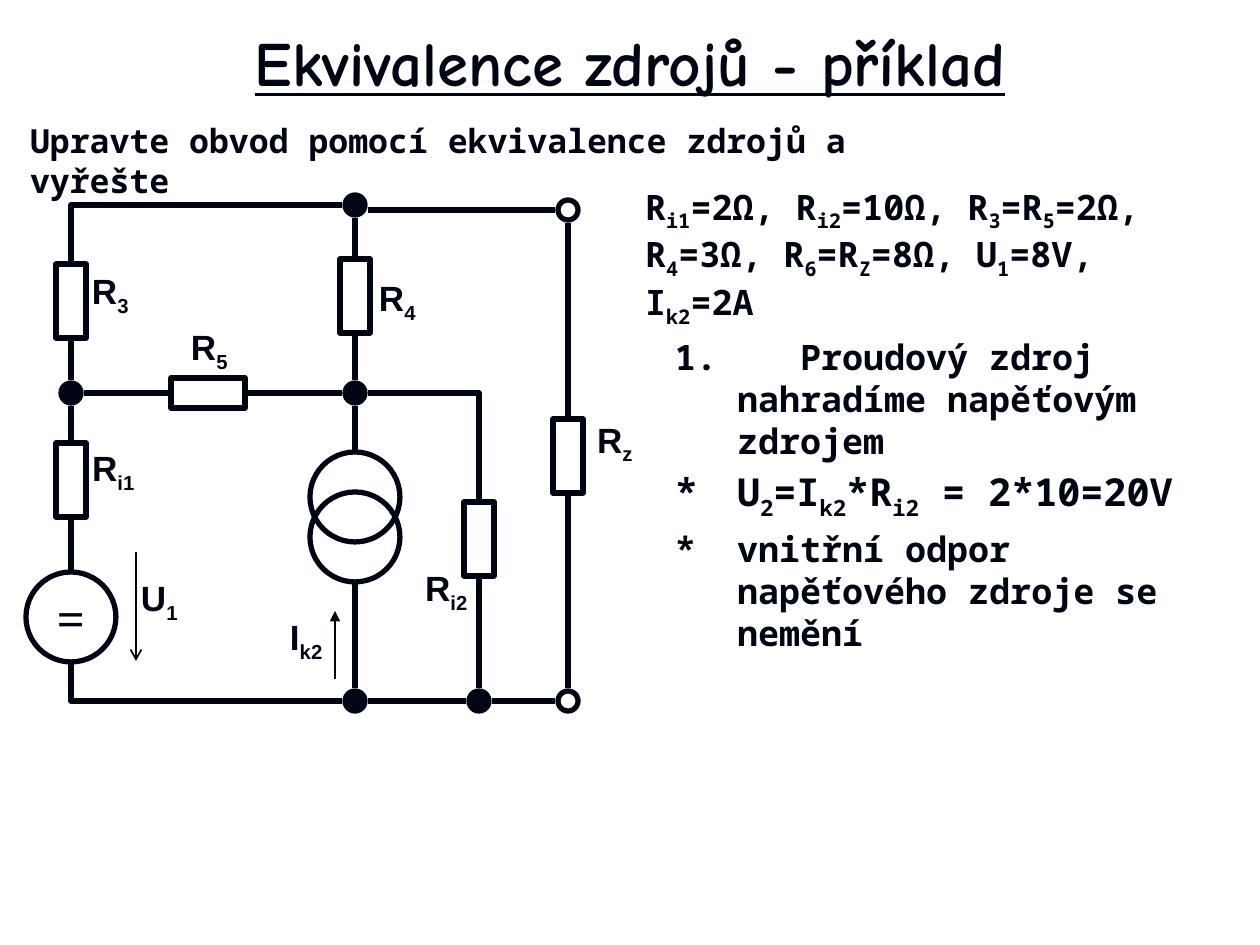
from lxml.etree import SubElement
from pptx import Presentation
from pptx.dml.color import RGBColor
from pptx.enum.shapes import MSO_CONNECTOR, MSO_SHAPE
from pptx.enum.text import MSO_ANCHOR, MSO_AUTO_SIZE, PP_ALIGN
from pptx.oxml.ns import qn
from pptx.util import Emu, Pt

COLORS = {"ink": "000514"}
MONO = "Noto Sans Mono"
RADIUS = 10
GAP = 13


def px(n):
    return Emu(round(n * 914400 / 126))


def ink():
    return RGBColor.from_string(COLORS["ink"])


def place(sp, x, y, w, h):
    sp.left, sp.top, sp.width, sp.height = px(x), px(y), px(w), px(h)


def set_font(font, name, size):
    font.name, font.size, font.bold = name, Pt(size), True
    font.color.rgb = ink()


def write(p, text, name, size):
    set_font(p.font, name, size)
    for i, part in enumerate(text.split("|")):
        r = p.add_run()
        r.text = part
        if i % 2:
            r.font._element.set("baseline", "-25000")


def set_frame(tf, wrap=True):
    tf.word_wrap = wrap
    tf.auto_size = MSO_AUTO_SIZE.SHAPE_TO_FIT_TEXT
    tf.vertical_anchor = MSO_ANCHOR.TOP
    tf.margin_left = tf.margin_right = tf.margin_top = tf.margin_bottom = px(5)


def add_text(s, x, y, w, h, text, name=MONO, size=20, wrap=True):
    sp = s.shapes.add_textbox(px(x), px(y), px(w), px(h))
    set_frame(sp.text_frame, wrap)
    write(sp.text_frame.paragraphs[0], text, name, size)


def add_label(s, x, y, w, text):
    add_text(s, x, y, w, 53, text, "Arial", 20, False)


def add_outline(s, kind, x, y, w, h, filled=False):
    sp = s.shapes.add_shape(kind, px(x), px(y), px(w), px(h))
    sp.shadow.inherit = False
    if filled:
        sp.fill.solid()
        sp.fill.fore_color.rgb = ink()
    else:
        sp.fill.background()
    sp.line.color.rgb = ink()
    sp.line.width = Pt(3)
    return sp


def add_resistor(s, cx, cy, w=30, h=74):
    return add_outline(s, MSO_SHAPE.RECTANGLE, cx - w / 2, cy - h / 2, w, h)


def add_node(s, cx, cy, filled=True):
    add_outline(s, MSO_SHAPE.OVAL, cx - RADIUS, cy - RADIUS, 2 * RADIUS, 2 * RADIUS, filled)


def add_source(s, cx, cy):
    return add_outline(s, MSO_SHAPE.OVAL, cx - 45, cy - 45, 90, 90)


def add_line(s, x1, y1, x2, y2, width=3, head=None, kind=MSO_CONNECTOR.STRAIGHT):
    c = s.shapes.add_connector(kind, px(x1), px(y1), px(x2), px(y2))
    c.line.color.rgb = ink()
    c.line.width = Pt(width)
    if head:
        SubElement(c.line._get_or_add_ln(), qn("a:tailEnd"), type=head)
    SubElement(c._element.spPr, qn("a:effectLst"))
    return c


def add_corner(s, x1, y1, x2, y2):
    c = add_line(s, x1, y1, x2, y2, kind=MSO_CONNECTOR.ELBOW)
    c._element.spPr.find(qn("a:prstGeom")).set("prst", "bentConnector2")


def add_lead(s, resistor, side, x, y):
    c = add_line(s, x, y, x, y)
    c.end_connect(resistor, side)


def fill_title(s):
    title = s.shapes.title
    place(title, 164, 16, 932, 90)
    tf = title.text_frame
    tf.vertical_anchor = MSO_ANCHOR.MIDDLE
    p = tf.paragraphs[0]
    p.alignment = PP_ALIGN.CENTER
    write(p, "Ekvivalence zdrojů - příklad", "Comic Neue", 36)
    p.font.underline = True


def fill_steps(s):
    body = s.placeholders[1]
    place(body, 670, 330, 556, 244)
    tf = body.text_frame
    set_frame(tf)
    steps = ["1. \tProudový zdroj nahradíme napěťovým zdrojem",
             "*\tU|2|=I|k2|*R|i2| = 2*10=20V",
             "*\tvnitřní odpor napěťového zdroje se nemění"]
    for i, step in enumerate(steps):
        p = tf.add_paragraph() if i else tf.paragraphs[0]
        write(p, step, MONO, 22 if "|" in step else 20)
        p.space_before = Pt(4)
        pPr = p._p.get_or_add_pPr()
        pPr.set("marL", str(px(62)))
        pPr.set("indent", str(-px(62)))
        pPr.insert_element_before(pPr.makeelement(qn("a:buNone")), "a:tabLst", "a:defRPr")


def draw_circuit(s):
    left, mid, right, out = 71, 355, 479, 568
    top, row, bottom, out_top = 205, 393, 701, 210

    r3 = add_resistor(s, left, 301)
    ri1 = add_resistor(s, left, 480)
    r4 = add_resistor(s, mid, 296)
    ri2 = add_resistor(s, right, 539)
    rz = add_resistor(s, out, 456)
    r5 = add_resistor(s, 208, row, 74, 30)

    for x, y in [(left, row), (mid, top), (mid, row), (mid, bottom), (right, bottom)]:
        add_node(s, x, y)
    for y in (out_top, bottom):
        add_node(s, out, y, False)

    voltage = add_source(s, left, 617)
    tf = voltage.text_frame
    tf.word_wrap = False
    tf.vertical_anchor = MSO_ANCHOR.MIDDLE
    tf.paragraphs[0].alignment = PP_ALIGN.CENTER
    write(tf.paragraphs[0], "=", "Times New Roman", 28)
    for y in (497, 537):
        add_source(s, mid, y)

    for resistor, side, x, y in [(r3, 2, left, row - GAP), (ri1, 0, left, row + GAP),
                                 (ri1, 2, left, 570), (r4, 0, mid, top + GAP),
                                 (r4, 2, mid, row - GAP), (ri2, 2, right, bottom - GAP),
                                 (rz, 0, out, out_top + GAP), (rz, 2, out, bottom - GAP),
                                 (r5, 1, left + GAP, row), (r5, 3, mid - GAP, row)]:
        add_lead(s, resistor, side, x, y)

    add_line(s, mid, row + GAP, mid, 450)
    add_line(s, mid, 584, mid, bottom - GAP)
    add_line(s, mid + GAP, out_top, out - GAP, out_top)
    for x1, x2 in [(mid, right), (right, out)]:
        add_line(s, x1 + GAP, bottom, x2 - GAP, bottom)

    add_corner(s, mid - GAP, top, left, 262)
    add_corner(s, mid - GAP, bottom, left, 664)
    add_corner(s, mid + GAP, row, right, 500)
    add_line(s, 136, 552, 136, 661, 1, "arrow")
    add_line(s, 335, 679, 335, 611, 1, "triangle")

    for x, y, w, text in [(87, 442, 55, "R|i1"), (136, 572, 49, "U|1"),
                          (87, 265, 49, "R|3"), (186, 321, 49, "R|5"),
                          (420, 562, 55, "R|i2"), (285, 611, 45, "I|k2"),
                          (592, 413, 47, "R|z"), (374, 272, 49, "R|4")]:
        add_label(s, x, y, w, text)


def main():
    prs = Presentation()
    prs.slide_width, prs.slide_height = px(1260), px(945)
    s = prs.slides.add_slide(prs.slide_layouts[1])
    fill_title(s)
    add_text(s, 25, 115, 853, 50, "Upravte obvod pomocí ekvivalence zdrojů a vyřešte", size=19)
    fill_steps(s)
    draw_circuit(s)
    add_text(s, 640, 180, 576, 95,
             "R|i1|=2Ω, R|i2|=10Ω, R|3|=R|5|=2Ω, R|4|=3Ω, R|6|=R|Z|=8Ω, U|1|=8V, I|k2|=2A")
    prs.save("out.pptx")


if __name__ == "__main__":
    main()
